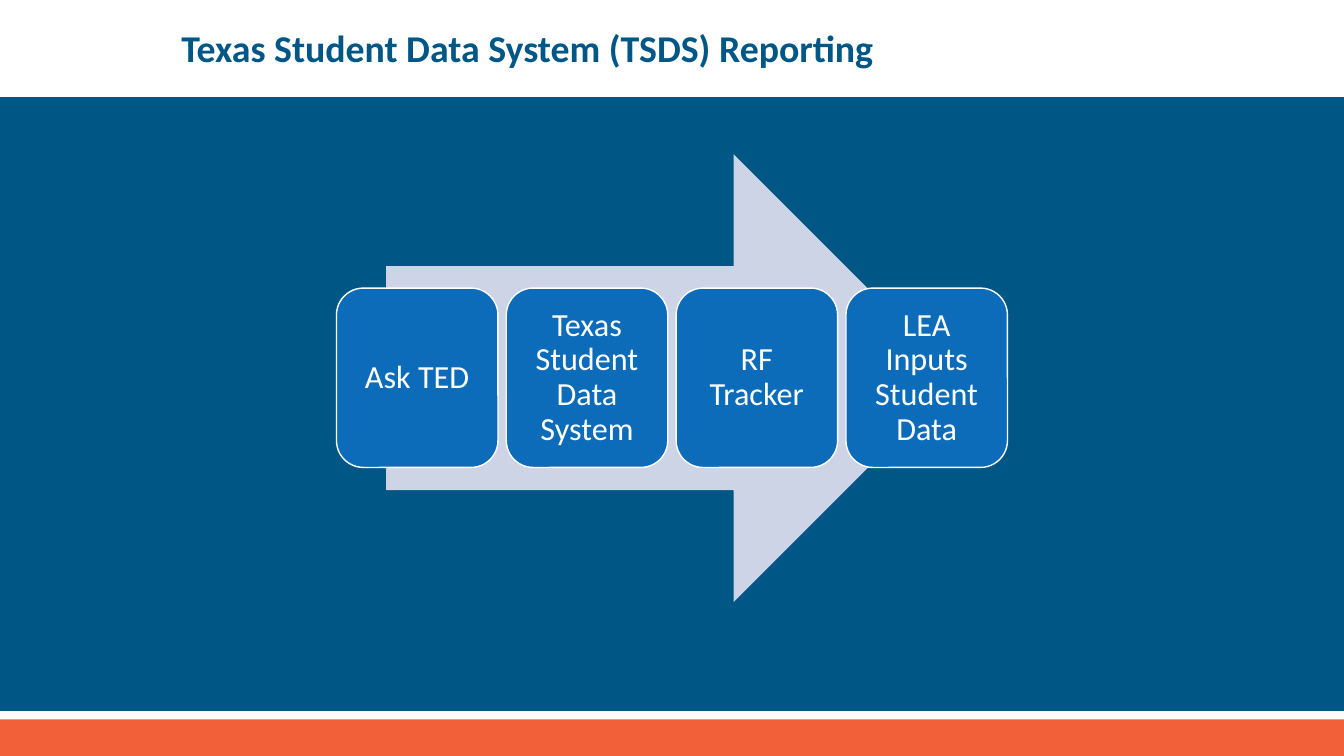
from pptx import Presentation
from pptx.dml.color import RGBColor
from pptx.enum.shapes import MSO_SHAPE
from pptx.enum.text import MSO_ANCHOR, PP_ALIGN
from pptx.util import Cm, Pt

NAVY = RGBColor(0x00, 0x57, 0x86)
BLUE = RGBColor(0x0D, 0x6C, 0xB9)
PALE = RGBColor(0xCC, 0xD4, 0xE6)
ORANGE = RGBColor(0xF1, 0x60, 0x38)
WHITE = RGBColor(0xFF, 0xFF, 0xFF)

SLIDE_WIDTH = 33.87
STEP_LEFT, STEP_PITCH = 8.48, 4.28
STEPS = ["Ask\N{NO-BREAK SPACE}TED", "Texas Student Data System", "RF Tracker", "LEA Inputs Student Data"]


def add_filled_shape(kind, left, top, width, height, fill, line=None):
    shape = slide.shapes.add_shape(kind, Cm(left), Cm(top), Cm(width), Cm(height))
    shape.shadow.inherit = False
    shape.fill.solid()
    shape.fill.fore_color.rgb = fill
    if line is None:
        shape.line.fill.background()
    else:
        shape.line.color.rgb = line
        shape.line.width = Pt(1)
    return shape


def write_text(shape, text, alignment, inset, font_format, color):
    frame = shape.text_frame
    frame.word_wrap = True
    frame.vertical_anchor = MSO_ANCHOR.MIDDLE
    for side in ("left", "right", "top", "bottom"):
        setattr(frame, f"margin_{side}", Cm(inset))
    paragraph = frame.paragraphs[0]
    paragraph.alignment = alignment
    paragraph.line_spacing = 0.9
    run = paragraph.add_run()
    run.text = text
    for name, value in font_format.items():
        setattr(run.font, name, value)
    run.font.color.rgb = color


presentation = Presentation()
presentation.slide_width = Cm(SLIDE_WIDTH)
presentation.slide_height = Cm(19.05)
slide = presentation.slides.add_slide(presentation.slide_layouts[6])

add_filled_shape(MSO_SHAPE.RECTANGLE, 0, 2.44, SLIDE_WIDTH, 15.47, NAVY, NAVY)
add_filled_shape(MSO_SHAPE.RECTANGLE, 0, 18.13, SLIDE_WIDTH, 0.92, ORANGE)
add_filled_shape(MSO_SHAPE.RECTANGLE, 0, 0, SLIDE_WIDTH, 2.44, WHITE)

title = slide.shapes.add_textbox(Cm(4.32), Cm(0.23), Cm(29.5), Cm(2.08))
title_font = {"name": "Calibri", "size": Pt(27), "bold": True}
write_text(title, "Texas Student Data System (TSDS) Reporting", PP_ALIGN.LEFT, 0.25, title_font, NAVY)

add_filled_shape(MSO_SHAPE.RIGHT_ARROW, 9.73, 3.89, 14.4, 11.28, PALE)

step_font = {"name": "Calibri", "size": Pt(23)}
for index, step in enumerate(STEPS):
    left = STEP_LEFT + index * STEP_PITCH
    box = add_filled_shape(MSO_SHAPE.ROUNDED_RECTANGLE, left, 7.26, 4.07, 4.52, BLUE, WHITE)
    write_text(box, step, PP_ALIGN.CENTER, 0.25, step_font, WHITE)

presentation.save("out.pptx")
